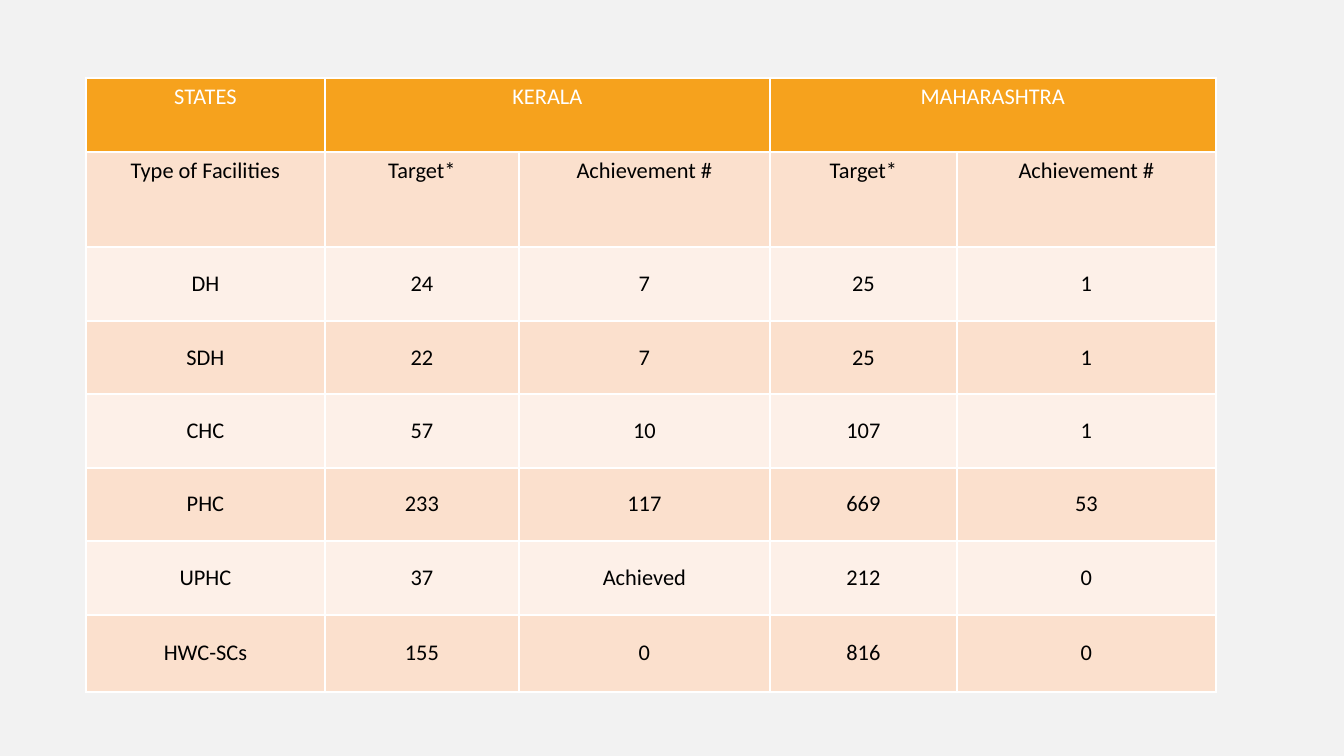
from lxml.etree import SubElement
from pptx import Presentation
from pptx.dml.color import RGBColor
from pptx.enum.text import MSO_ANCHOR as Anchor, PP_ALIGN as Align
from pptx.oxml.ns import qn
from pptx.util import Pt

SCALE = 914400 / 134.4  # EMU per px
COLORS = {
    "background": "F2F2F2",
    "header": "F6A21D",
    "dark_band": "FBE0CD",
    "light_band": "FDF0E8",
    "white": "FFFFFF",
    "black": "000000",
}


def px(length):
    return round(length * SCALE)


def write_cell(cell, text, *, fill, color, anchor, size=12, font="Calibri"):
    cell.margin_left = cell.margin_right = px(9)
    cell.margin_top = cell.margin_bottom = px(5)
    cell.vertical_anchor = anchor
    # Borders come before the fill in the cell properties
    properties = cell._tc.get_or_add_tcPr()
    for side in ("lnL", "lnR", "lnT", "lnB"):
        line = SubElement(properties, qn(f"a:{side}"), w=str(Pt(1)))
        line_fill = SubElement(line, qn("a:solidFill"))
        SubElement(line_fill, qn("a:srgbClr"), val=COLORS["white"])
    cell.fill.solid()
    cell.fill.fore_color.rgb = RGBColor.from_string(COLORS[fill])
    paragraph = cell.text_frame.paragraphs[0]
    paragraph.alignment = Align.CENTER
    paragraph.font.size = Pt(size)
    if text:
        run = paragraph.add_run()
        run.text = text
        run.font.name = font
        run.font.size = Pt(size)
        run.font.bold = False
        run.font.color.rgb = RGBColor.from_string(COLORS[color])


# Slide and background
presentation = Presentation()
presentation.slide_width = px(1344)
presentation.slide_height = px(756)
slide = presentation.slides.add_slide(presentation.slide_layouts[6])
slide.background.fill.solid()
slide.background.fill.fore_color.rgb = RGBColor.from_string(COLORS["background"])

# Table content and grid
facility_rows = [
    ["STATES", "KERALA", "", "MAHARASHTRA", ""],
    ["Type of Facilities", "Target*", "Achievement #", "Target*", "Achievement #"],
    ["DH", "24", "7", "25", "1"],
    ["SDH", "22", "7", "25", "1"],
    ["CHC", "57", "10", "107", "1"],
    ["PHC", "233", "117", "669", "53"],
    ["UPHC", "37", "Achieved", "212", "0"],
    ["HWC-SCs", "155", "0", "816", "0"],
]
column_widths = [239, 194, 251, 187, 259]
row_heights = [74, 95, 74, 73, 74, 73, 74, 77]

shape = slide.shapes.add_table(
    len(row_heights), len(column_widths), px(86), px(78),
    px(sum(column_widths)), px(sum(row_heights)),
)
table = shape.table
for column, width in zip(table.columns, column_widths):
    column.width = px(width)
for row, height in zip(table.rows, row_heights):
    row.height = px(height)

# Each state spans its target and achievement columns
for first in (1, 3):
    table.cell(0, first).merge(table.cell(0, first + 1))

# Header row, then alternating bands
for row_index, texts in enumerate(facility_rows):
    if row_index == 0:
        fill, color = "header", "white"
    else:
        fill, color = ("dark_band" if row_index % 2 else "light_band"), "black"
    anchor = Anchor.TOP if row_index < 2 else Anchor.MIDDLE
    for column_index, text in enumerate(texts):
        write_cell(table.cell(row_index, column_index), text,
                   fill=fill, color=color, anchor=anchor)

presentation.save("out.pptx")
